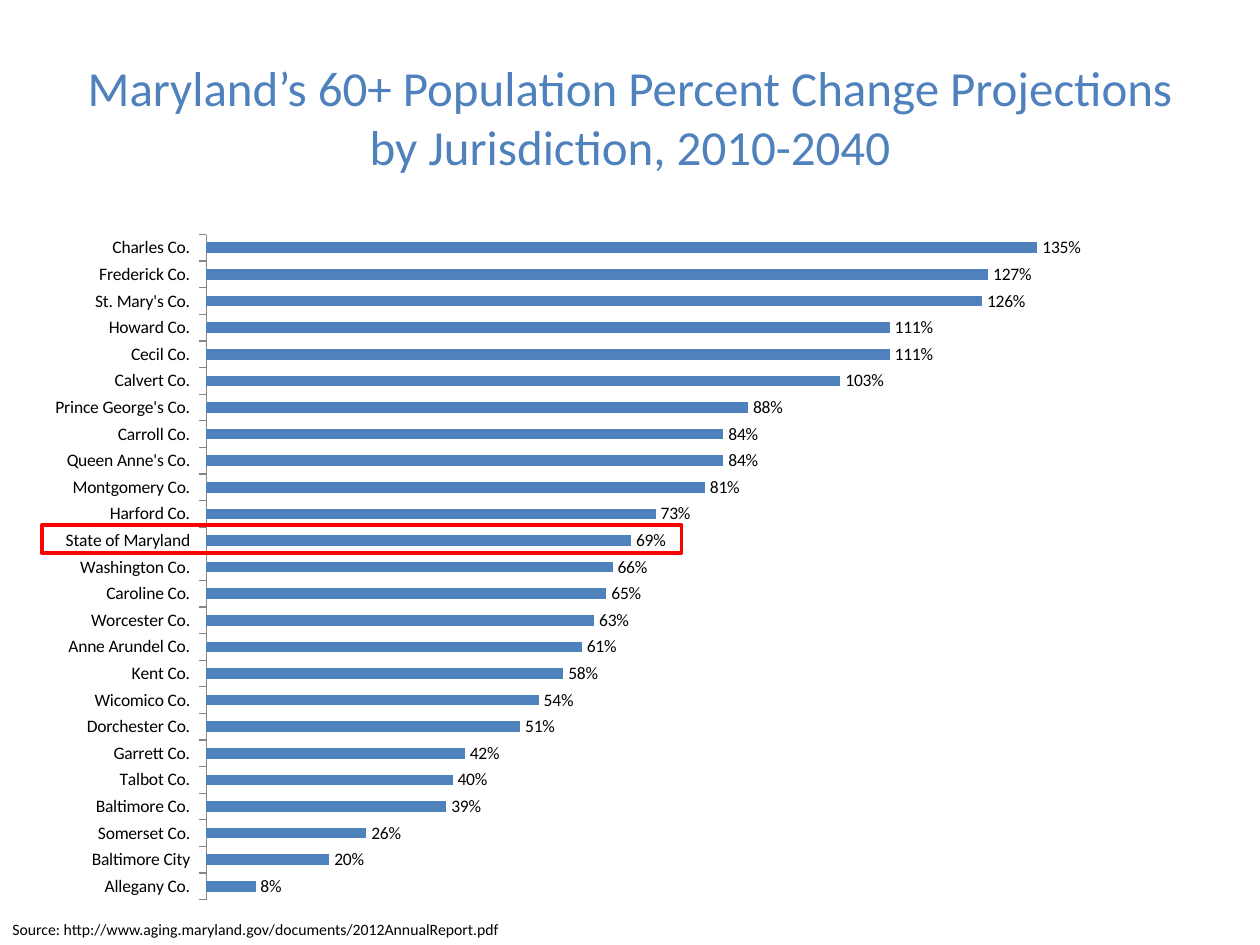
"""Build a slide of Maryland's projected 60+ population change by jurisdiction."""
import lxml.etree
import pptx
import pptx.chart.data
import pptx.dml.color
import pptx.enum.chart
import pptx.enum.shapes
import pptx.enum.text
import pptx.oxml.ns
import pptx.util

Cm = pptx.util.Cm
Pt = pptx.util.Pt
RGBColor = pptx.dml.color.RGBColor
PP_ALIGN = pptx.enum.text.PP_ALIGN
MSO_ANCHOR = pptx.enum.text.MSO_ANCHOR
XL = pptx.enum.chart

BLUE = RGBColor(0x4F, 0x81, 0xBD)
BLACK = RGBColor(0, 0, 0)
RED = RGBColor(0xFF, 0, 0)
GRAY = RGBColor(0x86, 0x86, 0x86)
FONT = "Calibri"

CHANGES = {
    "Allegany Co.": 0.08,
    "Baltimore City": 0.20,
    "Somerset Co.": 0.26,
    "Baltimore Co.": 0.39,
    "Talbot Co.": 0.40,
    "Garrett Co.": 0.42,
    "Dorchester Co.": 0.51,
    "Wicomico Co.": 0.54,
    "Kent Co.": 0.58,
    "Anne Arundel Co.": 0.61,
    "Worcester Co.": 0.63,
    "Caroline Co.": 0.65,
    "Washington Co.": 0.66,
    "State of Maryland": 0.69,
    "Harford Co.": 0.73,
    "Montgomery Co.": 0.81,
    "Queen Anne's Co.": 0.84,
    "Carroll Co.": 0.84,
    "Prince George's Co.": 0.88,
    "Calvert Co.": 1.03,
    "Cecil Co.": 1.11,
    "Howard Co.": 1.11,
    "St. Mary's Co.": 1.26,
    "Frederick Co.": 1.27,
    "Charles Co.": 1.35,
}


def add_text(s, text, box, size, color=BLACK, align=PP_ALIGN.LEFT, anchor=MSO_ANCHOR.TOP):
    sp = s.shapes.add_textbox(*map(Cm, box))
    tf = sp.text_frame
    tf.word_wrap = True
    tf.vertical_anchor = anchor
    p = tf.paragraphs[0]
    p.alignment = align
    r = p.add_run()
    r.text = text
    r.font.name = FONT
    r.font.size = Pt(size)
    r.font.color.rgb = color


def set_plot_layout(chart, **fractions):
    plot_area = chart.plots[0]._element.getparent()
    qn = pptx.oxml.ns.qn
    layout = plot_area.find(qn("c:layout"))
    if layout is None:
        layout = lxml.etree.Element(qn("c:layout"))
        plot_area.insert(0, layout)
    manual = lxml.etree.SubElement(layout, qn("c:manualLayout"))
    settings = {"layoutTarget": "inner", "xMode": "edge", "yMode": "edge", **fractions}
    for name, value in settings.items():
        lxml.etree.SubElement(manual, qn(f"c:{name}")).set("val", str(value))


def add_bar_chart(s, changes, box):
    data = pptx.chart.data.CategoryChartData(number_format="0%")
    data.categories = [f"{name} " for name in changes]
    data.add_series("Series 1", changes.values())
    chart = s.shapes.add_chart(XL.XL_CHART_TYPE.BAR_CLUSTERED, *map(Cm, box), data).chart
    chart.has_legend = False
    chart.has_title = False
    chart.font.name = FONT
    chart.font.size = Pt(10)
    chart.font.color.rgb = BLACK

    plot = chart.plots[0]
    plot.vary_by_categories = False
    plot.gap_width = 150
    fill = plot.series[0].format.fill
    fill.solid()
    fill.fore_color.rgb = BLUE
    plot.has_data_labels = True
    labels = plot.data_labels
    labels.show_value = True
    labels.number_format = "0%"
    labels.number_format_is_linked = False
    labels.position = XL.XL_LABEL_POSITION.OUTSIDE_END

    axis = chart.category_axis
    axis.major_tick_mark = XL.XL_TICK_MARK.OUTSIDE
    axis.format.line.color.rgb = GRAY
    values = chart.value_axis
    values.minimum_scale = 0
    values.maximum_scale = 1.6
    values.has_major_gridlines = False
    values.visible = False
    set_plot_layout(chart, x=0.147, y=0.02, w=0.83, h=0.96)


def add_highlight(s, box):
    sp = s.shapes.add_shape(pptx.enum.shapes.MSO_SHAPE.RECTANGLE, *map(Cm, box))
    sp.shadow.inherit = False
    sp.fill.background()
    sp.line.color.rgb = RED
    sp.line.width = Pt(2.25)


def main():
    prs = pptx.Presentation()
    prs.slide_width, prs.slide_height = Cm(25.4), Cm(19.05)
    s = prs.slides.add_slide(prs.slide_layouts[6])
    add_text(
        s,
        "Maryland’s 60+ Population Percent Change Projections by Jurisdiction, 2010-2040",
        (1.27, 0.76, 22.86, 3.18),
        28,
        color=BLUE,
        align=PP_ALIGN.CENTER,
        anchor=MSO_ANCHOR.MIDDLE,
    )
    add_bar_chart(s, CHANGES, (0.64, 4.45, 23.93, 13.97))
    add_highlight(s, (0.84, 10.59, 12.9, 0.56))
    add_text(
        s,
        "Source: http://www.aging.maryland.gov/documents/2012AnnualReport.pdf",
        (0, 18.42, 25.4, 0.64),
        9,
    )
    prs.save("out.pptx")


if __name__ == "__main__":
    main()
